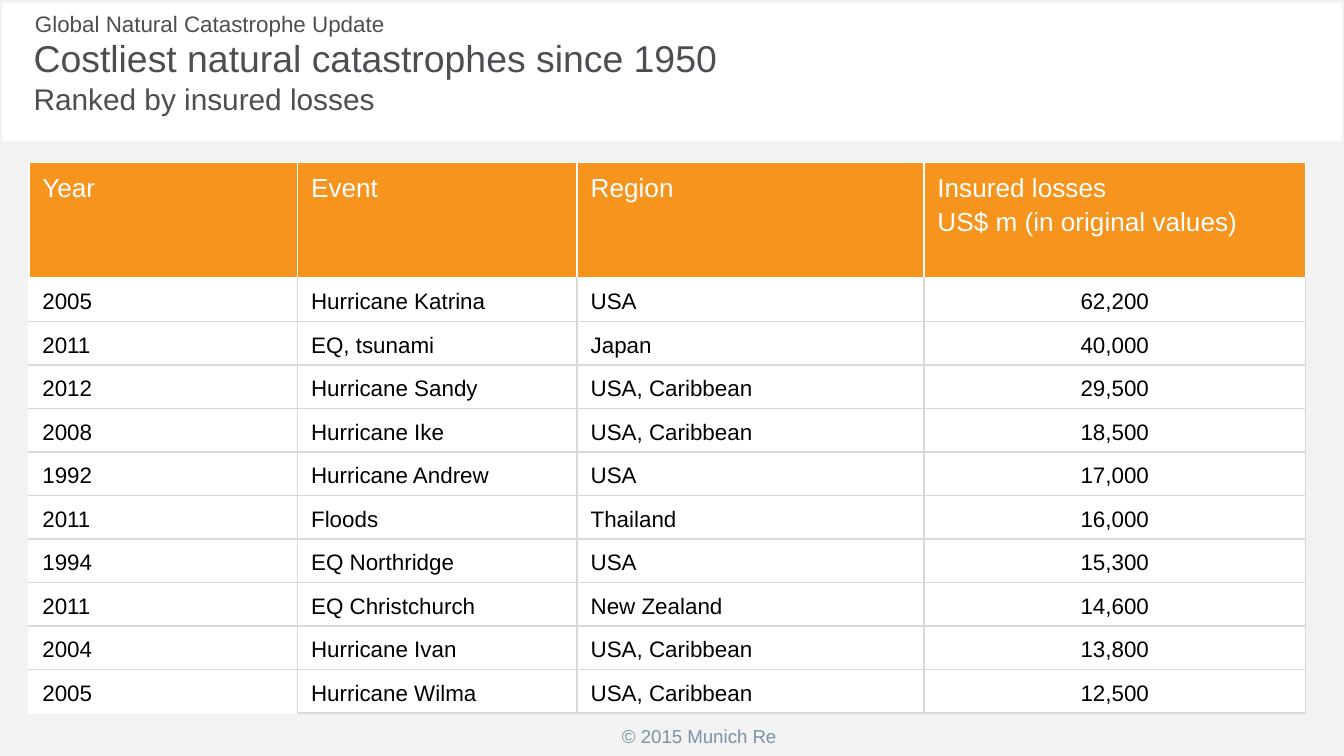
"""Build a slide ranking the costliest natural catastrophes by insured losses."""
from typing import NamedTuple, Optional

from lxml.etree import SubElement
from pptx import Presentation
from pptx.dml.color import RGBColor
from pptx.enum.shapes import MSO_SHAPE
from pptx.enum.text import MSO_ANCHOR, PP_ALIGN
from pptx.oxml.ns import qn
from pptx.util import Inches, Pt

WHITE = RGBColor(0xFF, 0xFF, 0xFF)
BLACK = RGBColor(0x00, 0x00, 0x00)
PANEL = RGBColor(0xF2, 0xF2, 0xF2)
RULE = RGBColor(0xD9, 0xD9, 0xD9)
ORANGE = RGBColor(0xF7, 0x94, 0x1D)
SLATE = RGBColor(0x4D, 0x4E, 0x53)
BLUE_GREY = RGBColor(0x7A, 0x94, 0xA3)

FONT = "Arial"
UNIT = Inches(0.1)
COLS, ROWS = 100, 56.25
COL_SPANS = (20, 20.8, 25.8, 28.4)
HEAD_SPAN, BODY_SPAN = 8.6, 3.24


class Box(NamedTuple):
    """Place and size in grid columns and rows."""
    col: float
    row: float
    cols: float
    rows: float

    def emu(self) -> list[int]:
        """Return the four lengths."""
        return [grid(n) for n in self]


class Loss(NamedTuple):
    """One table row."""
    year: str
    event: str
    region: str
    insured: str


HEADER = Loss("Year", "Event", "Region", "Insured losses\nUS$ m (in original values)")
LOSSES = (
    Loss("2005", "Hurricane Katrina", "USA", "62,200"),
    Loss("2011", "EQ, tsunami", "Japan", "40,000"),
    Loss("2012", "Hurricane Sandy", "USA, Caribbean", "29,500"),
    Loss("2008", "Hurricane Ike", "USA, Caribbean", "18,500"),
    Loss("1992", "Hurricane Andrew", "USA", "17,000"),
    Loss("2011", "Floods", "Thailand", "16,000"),
    Loss("1994", "EQ Northridge", "USA", "15,300"),
    Loss("2011", "EQ Christchurch", "New Zealand", "14,600"),
    Loss("2004", "Hurricane Ivan", "USA, Caribbean", "13,800"),
    Loss("2005", "Hurricane Wilma", "USA, Caribbean", "12,500"),
)


def grid(n: float) -> int:
    """Convert grid steps to a length."""
    return round(n * UNIT)


def write(p, text: str, *, size: float, color: RGBColor,
          align: Optional[PP_ALIGN] = None, spacing: Optional[float] = None) -> None:
    """Add a formatted run to a paragraph."""
    if align is not None:
        p.alignment = align
    if spacing is not None:
        p.line_spacing = spacing
    r = p.add_run()
    r.text = text
    r.font.name, r.font.size, r.font.bold = FONT, Pt(size), False
    r.font.color.rgb = color


def add_panel(slide, box: Box, fill: Optional[RGBColor] = None,
              line: Optional[RGBColor] = None) -> None:
    """Draw a rectangle with a fill, an outline or both."""
    sp = slide.shapes.add_shape(MSO_SHAPE.RECTANGLE, *box.emu())
    sp.shadow.inherit = False
    if fill is None:
        sp.fill.background()
    else:
        sp.fill.solid()
        sp.fill.fore_color.rgb = fill
    if line is None:
        sp.line.fill.background()
    else:
        sp.line.color.rgb, sp.line.width = line, Pt(2)


def add_label(slide, box: Box, text: str, *, size: float, color: RGBColor,
              inset: float) -> None:
    """Add a one-line text box."""
    tf = slide.shapes.add_textbox(*box.emu()).text_frame
    tf.word_wrap = False
    tf.margin_left = tf.margin_right = grid(inset)
    write(tf.paragraphs[0], text, size=size, color=color)


def set_title(slide, box: Box, lines: tuple[tuple[str, float], ...]) -> None:
    """Place the title in front of the panels and fill its lines."""
    sp = slide.shapes.title
    sp.element.getparent().append(sp.element)
    sp.left, sp.top, sp.width, sp.height = box.emu()
    tf = sp.text_frame
    tf.margin_left = tf.margin_right = tf.margin_top = tf.margin_bottom = 0
    tf.vertical_anchor = MSO_ANCHOR.BOTTOM
    p = tf.paragraphs[0]
    for i, (text, size) in enumerate(lines):
        if i:
            p.add_line_break()
        write(p, text, size=size, color=SLATE, align=PP_ALIGN.LEFT)


def set_borders(cell, **colors: RGBColor) -> None:
    """Draw one-point cell borders, keyed L, R, T and B in that order."""
    tc_pr = cell._tc.get_or_add_tcPr()
    for i, (side, color) in enumerate(colors.items()):
        ln = SubElement(tc_pr, qn(f"a:ln{side}"), w=str(Pt(1)))
        SubElement(SubElement(ln, qn("a:solidFill")), qn("a:srgbClr"), val=str(color))
        tc_pr.insert(i, ln)


def add_loss_table(slide, box: Box) -> None:
    """Draw the header and the ranked losses."""
    rows = (HEADER, *LOSSES)
    table = slide.shapes.add_table(len(rows), len(COL_SPANS), *box.emu()).table
    table.horz_banding = False
    for column, span in zip(table.columns, COL_SPANS):
        column.width = grid(span)
    for i, loss in enumerate(rows):
        head = i == 0
        table.rows[i].height = grid(HEAD_SPAN if head else BODY_SPAN)
        for j, text in enumerate(loss):
            cell = table.cell(i, j)
            cell.fill.solid()
            cell.fill.fore_color.rgb = ORANGE if head else WHITE
            cell.vertical_anchor = MSO_ANCHOR.TOP if head else MSO_ANCHOR.MIDDLE
            last_year = j == 0 and i == len(LOSSES)
            set_borders(cell,
                        L=WHITE if head or j == 0 else RULE,
                        R=WHITE if head else RULE,
                        T=WHITE if i <= 1 else RULE,
                        B=WHITE if head or last_year else RULE)
            centred = not head and j == len(COL_SPANS) - 1
            tf = cell.text_frame
            for n, line in enumerate(text.split("\n")):
                p = tf.add_paragraph() if n else tf.paragraphs[0]
                write(p, line, size=14 if head else 12, color=WHITE if head else BLACK,
                      align=PP_ALIGN.CENTER if centred else PP_ALIGN.LEFT, spacing=1.15)


def main() -> None:
    """Build and save the slide."""
    prs = Presentation()
    prs.slide_width, prs.slide_height = grid(COLS), grid(ROWS)
    slide = prs.slides.add_slide(prs.slide_layouts[5])
    add_panel(slide, Box(0, 10.5, COLS, ROWS - 10.5), fill=PANEL)
    add_panel(slide, Box(0, 0.1, COLS, ROWS), line=PANEL)
    add_label(slide, Box(45.3, 53.45, 13.6, 2.7), "© 2015 Munich Re",
              size=10, color=BLUE_GREY, inset=1)
    add_label(slide, Box(2.6, 0.3, 26.2, 3), "Global Natural Catastrophe Update",
              size=12, color=SLATE, inset=0)
    set_title(slide, Box(2.5, 2.75, 74.8, 5.9),
              (("Costliest natural catastrophes since 1950", 20),
               ("Ranked by insured losses", 16)))
    add_loss_table(slide, Box(2.15, 12.1, sum(COL_SPANS), HEAD_SPAN + BODY_SPAN * len(LOSSES)))
    prs.save("out.pptx")


if __name__ == "__main__":
    main()
